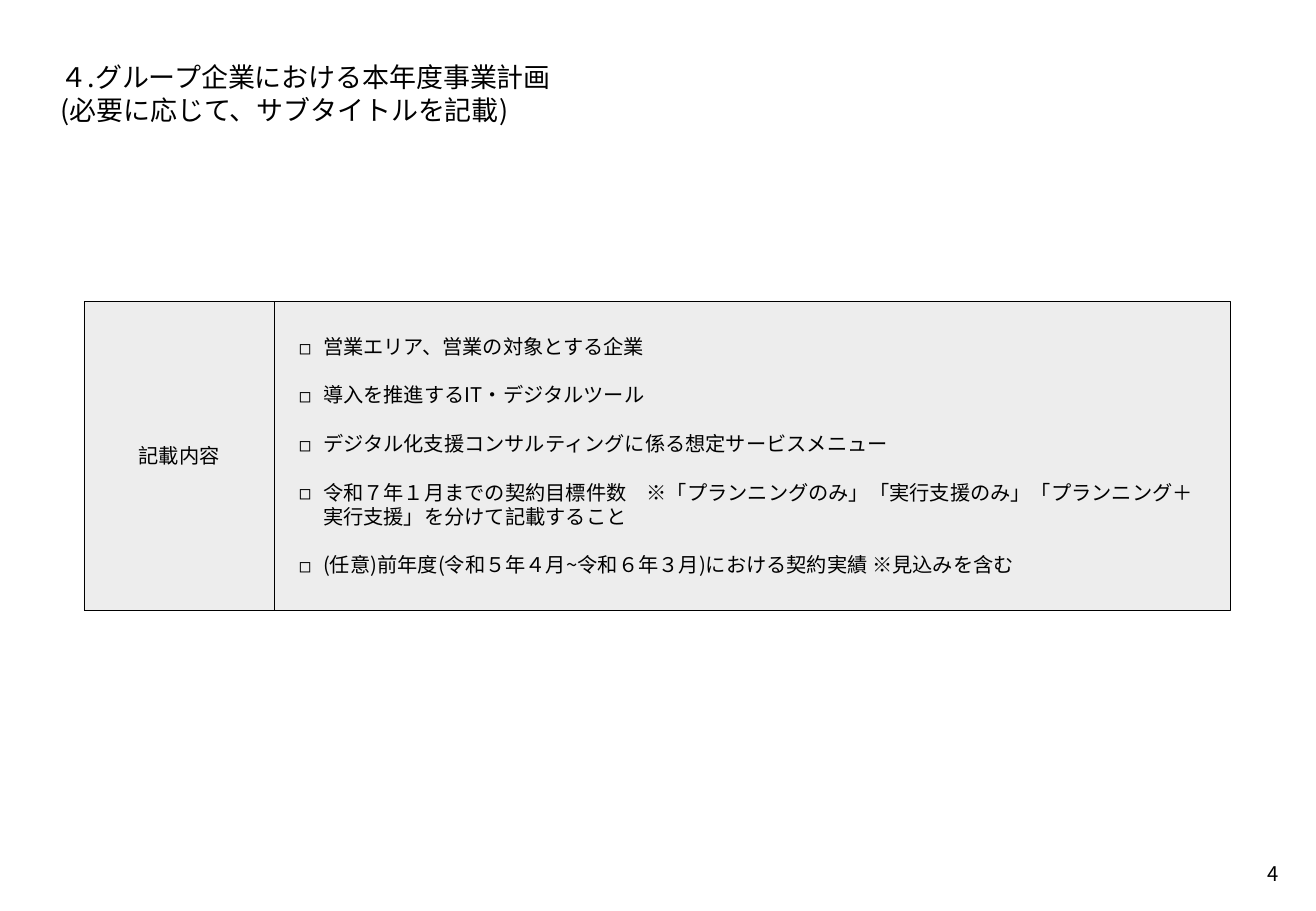
from dataclasses import dataclass

from lxml.etree import SubElement
from pptx import Presentation
from pptx.dml.color import RGBColor
from pptx.enum.dml import MSO_LINE
from pptx.enum.shapes import MSO_SHAPE as Shape
from pptx.enum.text import MSO_ANCHOR as Anchor, MSO_AUTO_SIZE as AutoSize, PP_ALIGN as Align
from pptx.oxml.ns import qn
from pptx.util import Pt


@dataclass(frozen=True)
class Theme:
    font: str = "Noto Sans CJK JP"
    ink: RGBColor = RGBColor(0x00, 0x00, 0x00)
    panel: RGBColor = RGBColor(0xED, 0xED, 0xED)
    title_size: int = 16
    text_size: int = 12
    leading: float = 1.2
    border: float = 0.25
    inset: float = 14.4


THEME = Theme()
SLIDE_SIZE = (780, 540)
PANEL_TOP, PANEL_HEIGHT = 178.6, 182.9
LABEL_LEFT, LABEL_WIDTH, LIST_WIDTH = 49.7, 113, 566.6

TITLE = "４.グループ企業における本年度事業計画\v(必要に応じて、サブタイトルを記載)"
LABEL = "記載内容"
ITEMS = [
    "営業エリア、営業の対象とする企業",
    "導入を推進するIT・デジタルツール",
    "デジタル化支援コンサルティングに係る想定サービスメニュー",
    "令和７年１月までの契約目標件数　※「プランニングのみ」「実行支援のみ」「プランニング＋実行支援」を分けて記載すること",
    "(任意)前年度(令和５年４月~令和６年３月)における契約実績 ※見込みを含む",
]
PAGE_NUMBER = "4"


def apply(target, formats):
    for name, value in formats.items():
        setattr(target, name, value)


def place(shape, left, top, width, height):
    box = {"left": left, "top": top, "width": width, "height": height}
    apply(shape, {side: Pt(length) for side, length in box.items()})


def write(shape, lines, size, align=Align.LEFT, anchor=Anchor.TOP, inset=THEME.inset, wrap=True):
    """Fill the shape with one formatted paragraph per line."""
    frame = shape.text_frame
    apply(frame, {"word_wrap": wrap, "auto_size": AutoSize.NONE, "vertical_anchor": anchor})
    apply(frame, {f"margin_{side}": Pt(inset) for side in ("left", "top", "right", "bottom")})
    frame.text = "\n".join(lines)
    for paragraph in frame.paragraphs:
        apply(paragraph, {"alignment": align, "line_spacing": Pt(size * THEME.leading),
                          "space_before": Pt(0), "space_after": Pt(0)})
        for run in paragraph.runs:
            apply(run.font, {"name": THEME.font, "size": Pt(size)})
            run.font.color.rgb = THEME.ink
            SubElement(run.font._element, qn("a:ea"), typeface=THEME.font)


def style_panel(shape):
    shape.fill.solid()
    shape.fill.fore_color.rgb = THEME.panel
    shape.line.color.rgb = THEME.ink
    apply(shape.line, {"width": Pt(THEME.border), "dash_style": MSO_LINE.ROUND_DOT})


def add_bullets(shape):
    """Give each paragraph a hanging square and a one-line gap above it."""
    for index, paragraph in enumerate(shape.text_frame.paragraphs):
        if index:
            paragraph.space_before = Pt(THEME.text_size * THEME.leading)
        properties = paragraph._p.get_or_add_pPr()
        properties.set("marL", str(Pt(THEME.inset)))
        properties.set("indent", str(-Pt(THEME.inset)))
        SubElement(properties, qn("a:buFont"), typeface=THEME.font)
        SubElement(properties, qn("a:buChar"), char="◻")


def add_title(slide):
    title = slide.shapes.title
    place(title, 21.6, 21.6, 737.3, 56.9)
    write(title, [TITLE], THEME.title_size)


def add_label(slide):
    label = slide.shapes.add_shape(Shape.RECTANGLE, 0, 0, 0, 0)
    label.shadow.inherit = False
    place(label, LABEL_LEFT, PANEL_TOP, LABEL_WIDTH, PANEL_HEIGHT)
    style_panel(label)
    write(label, [LABEL], THEME.text_size, Align.CENTER, Anchor.MIDDLE, 7.2)


def add_checklist(slide):
    checklist = slide.placeholders[1]
    place(checklist, LABEL_LEFT + LABEL_WIDTH, PANEL_TOP, LIST_WIDTH, PANEL_HEIGHT)
    style_panel(checklist)
    write(checklist, ITEMS, THEME.text_size, anchor=Anchor.MIDDLE)
    add_bullets(checklist)


def add_page_number(slide):
    number = slide.shapes.add_textbox(0, 0, 0, 0)
    place(number, 737.3, 503.3, 28, 28)
    write(number, [PAGE_NUMBER], THEME.text_size, Align.RIGHT, inset=7.2, wrap=False)


def main():
    deck = Presentation()
    deck.slide_width, deck.slide_height = map(Pt, SLIDE_SIZE)
    slide = deck.slides.add_slide(deck.slide_layouts[1])
    for add_part in (add_title, add_checklist, add_label, add_page_number):
        add_part(slide)
    deck.save("out.pptx")


if __name__ == "__main__":
    main()
